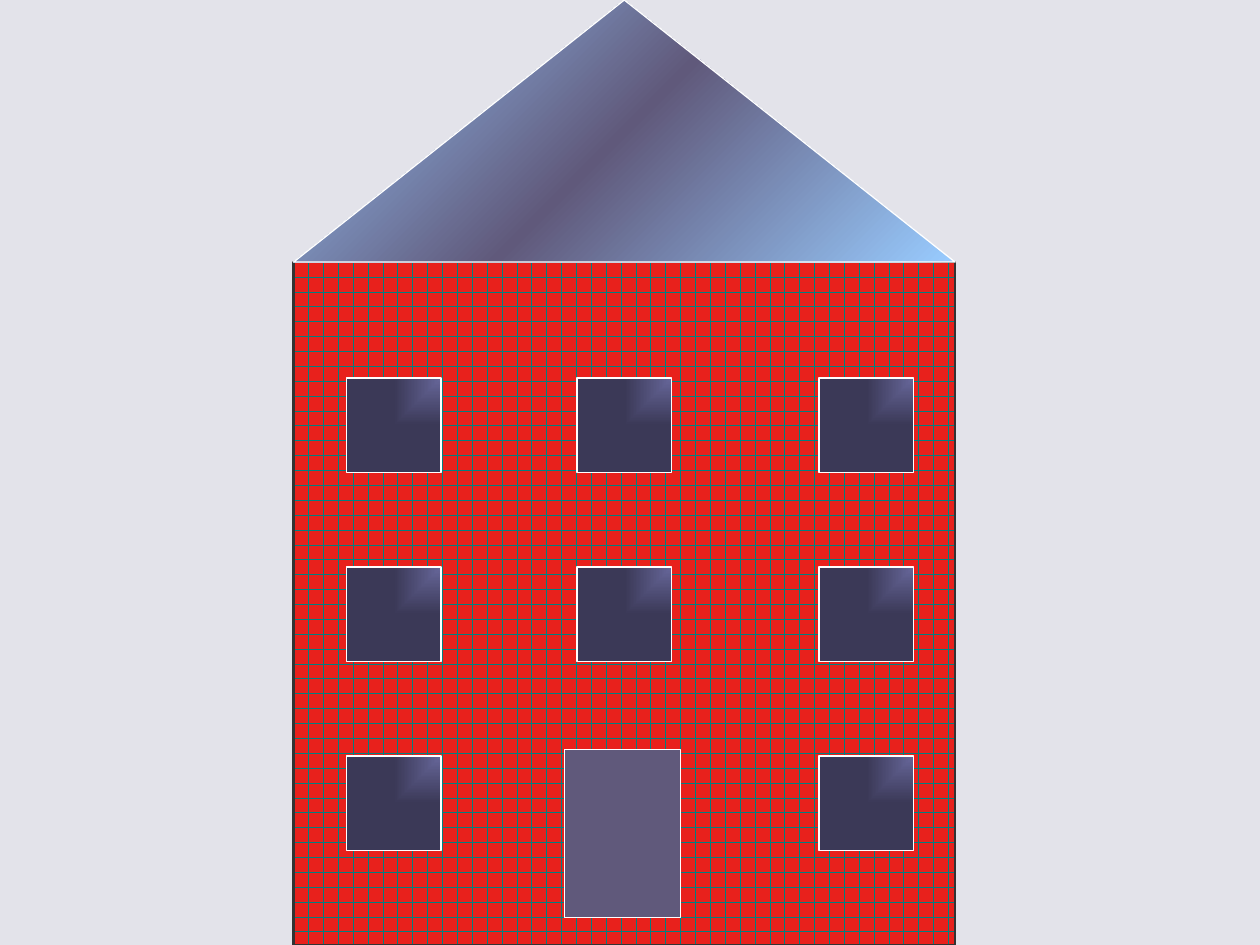
import pptx
import pptx.dml.color
import pptx.enum.dml
import pptx.enum.shapes
import pptx.oxml
import pptx.oxml.ns
import pptx.util
from pptx.util import Inches

SHAPE = pptx.enum.shapes.MSO_SHAPE
WHITE = "FFFFFF"
GLASS = ((0, "666699"), (100, "3B3957"))
ROOF = ((0, "99CCFF"), (50, "60597B"), (100, "99CCFF"))
DIAGONAL = '<a:lin ang="2700000" scaled="1"/>'
FROM_TOP_RIGHT = '<a:path path="rect"><a:fillToRect l="100000" b="100000"/></a:path>'


def rgb(value):
    return pptx.dml.color.RGBColor.from_string(value)


def add_part(slide, kind, box, line=WHITE, width=0.75):
    part = slide.shapes.add_shape(kind, *(Inches(length) for length in box))
    part.shadow.inherit = False
    part.line.color.rgb = rgb(line)
    part.line.width = pptx.util.Pt(width)
    return part


def fill_gradient(part, stops, direction):
    """Fill with (percent, colour) stops, spread as the direction XML says."""
    part.fill.gradient()
    gradient = part.fill._xPr.find(pptx.oxml.ns.qn("a:gradFill"))
    stop_xml = "".join(
        f'<a:gs pos="{percent * 1000}"><a:srgbClr val="{color}"/></a:gs>'
        for percent, color in stops)
    filled = pptx.oxml.parse_xml(
        f'<a:gradFill {pptx.oxml.ns.nsdecls("a")} rotWithShape="1">'
        f'<a:gsLst>{stop_xml}</a:gsLst>{direction}</a:gradFill>')
    gradient.getparent().replace(gradient, filled)


def add_wall(slide, box):
    wall = add_part(slide, SHAPE.RECTANGLE, box, "333333", 1.25)
    wall.fill.patterned()
    wall.fill.pattern = pptx.enum.dml.MSO_PATTERN.HORIZONTAL_BRICK
    wall.fill.fore_color.rgb = rgb("008080")
    wall.fill.back_color.rgb = rgb("E8211C")


def add_openings(slide, left, top):
    """Three storeys of windows, with the door in the middle of the lowest."""
    for storey in range(3):
        for column, offset in enumerate((0.42, 2.25, 4.17)):
            if (storey, column) == (2, 1):
                door = add_part(slide, SHAPE.RECTANGLE,
                                (left + 2.15, top + 3.87, 0.92, 1.33))
                door.fill.solid()
                door.fill.fore_color.rgb = rgb("60597B")
            else:
                window = add_part(
                    slide, SHAPE.RECTANGLE,
                    (left + offset, top + 0.92 + 1.5 * storey, 0.75, 0.75))
                fill_gradient(window, GLASS, FROM_TOP_RIGHT)


def add_roof(slide, box):
    roof = add_part(slide, SHAPE.ISOSCELES_TRIANGLE, box)
    fill_gradient(roof, ROOF, DIAGONAL)


def add_house(slide, left, top, width, height):
    roof_height = 2.08
    eaves = top + roof_height
    add_wall(slide, (left, eaves, width, height - roof_height))
    add_openings(slide, left, eaves)
    add_roof(slide, (left, top, width, roof_height))


def main():
    deck = pptx.Presentation()
    deck.slide_width, deck.slide_height = Inches(10), Inches(7.5)
    slide = deck.slides.add_slide(deck.slide_layouts[6])
    slide.background.fill.solid()
    slide.background.fill.fore_color.rgb = rgb("E3E3EA")
    add_house(slide, 2.33, 0, 5.25, 7.5)
    deck.save("out.pptx")


if __name__ == "__main__":
    main()
